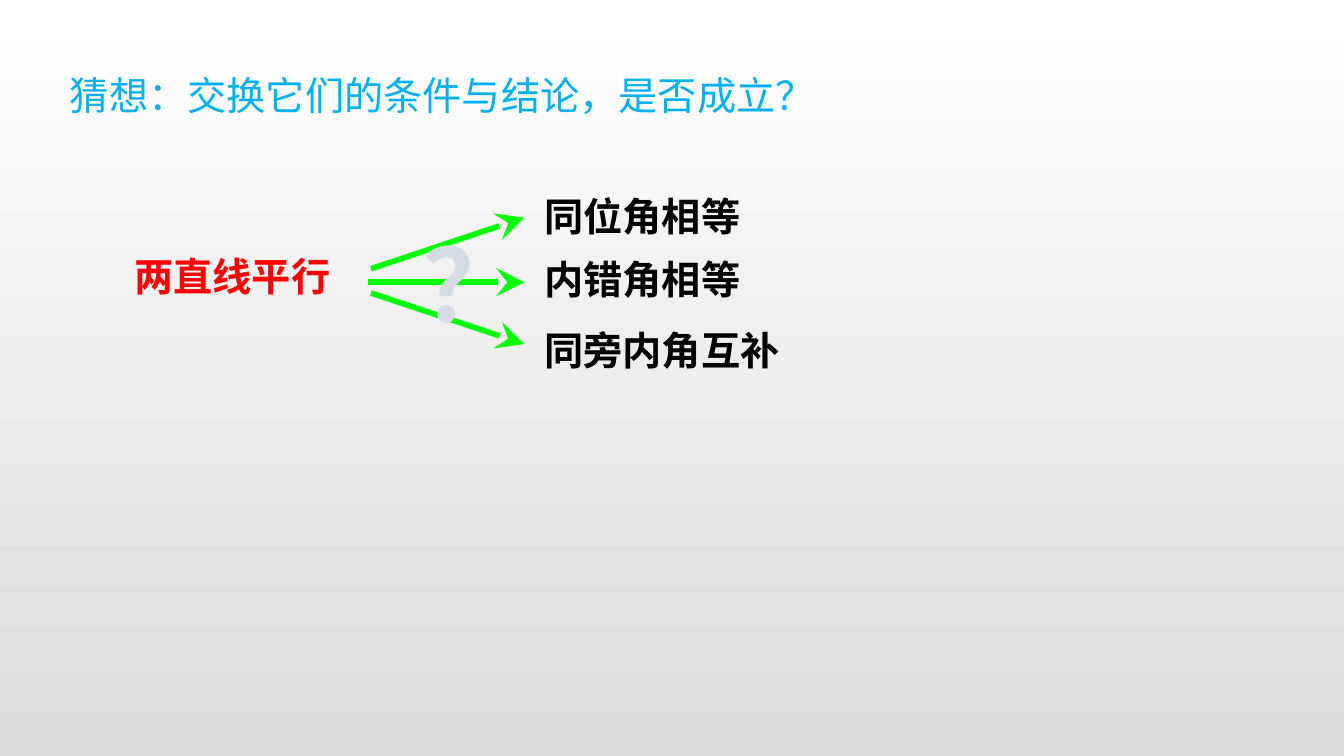
from lxml import etree
from pptx import Presentation
from pptx.dml.color import RGBColor
from pptx.enum.shapes import MSO_CONNECTOR
from pptx.enum.text import MSO_AUTO_SIZE, PP_ALIGN
from pptx.oxml.ns import qn
from pptx.util import Inches, Pt

LINE = MSO_CONNECTOR.STRAIGHT
GROW = MSO_AUTO_SIZE.SHAPE_TO_FIT_TEXT
LEFT = PP_ALIGN.LEFT
CENTER = PP_ALIGN.CENTER


def color(code):
    """Turn a hex string into a colour."""
    return RGBColor.from_string(code)


def label(slide, box, text, code, size=21, bold=True, face="Times New Roman",
          align=LEFT, wrap=True):
    """Place one line of text in a box and return its paragraph."""
    frame = slide.shapes.add_textbox(*map(Inches, box)).text_frame
    frame.word_wrap = wrap
    frame.auto_size = GROW
    frame.margin_left = frame.margin_right = Inches(0.07)
    frame.margin_top = frame.margin_bottom = Inches(0.04)
    para = frame.paragraphs[0]
    para.text = text
    para.alignment = align
    font = para.font
    font.name, font.size, font.bold = face, Pt(size), bold
    font.color.rgb = color(code)
    return para


def arrow(shapes, start, end):
    """Draw a green line with a large stealth head at its end."""
    line = shapes.add_connector(LINE, *map(Inches, (*start, *end)))
    line.line.color.rgb = color("00FF00")
    line.line.width = Pt(3)
    props = line._element.spPr
    etree.SubElement(props.find(qn("a:ln")), qn("a:tailEnd"),
                     type="stealth", w="lg", len="lg")
    etree.SubElement(props, qn("a:effectLst"))


def backdrop(slide):
    """Shade the slide from white at the top to grey at the bottom."""
    fill = slide.background.fill
    fill.gradient()
    fill.gradient_angle = 270
    for stop, code in zip(fill.gradient_stops, ("FFFFFF", "DBDBDB")):
        stop.color.rgb = color(code)


def title(slide, left, top):
    """Place the question that heads the slide."""
    para = label(slide, (left, top, 6.4, 0.43),
                 "猜想：交换它们的条件与结论，是否成立？", "00B0F0", bold=False)
    para.space_before = Pt(10.5)


def diagram(slide, left, top):
    """Link the premise to its three results, with a question mark on top."""
    label(slide, (left, top + 0.45, 1.92, 0.43), "两直线平行", "FF0000")
    results = (("同位角相等", 0, 1.93), ("内错角相等", 0.47, 1.93),
               ("同旁内角互补", 1, 2.26))
    for text, drop, width in results:
        label(slide, (left + 3.05, top + drop, width, 0.43), text, "000000")
    fan = slide.shapes.add_group_shape().shapes
    for indent, start, end in ((1.83, 0.61, 0.23), (1.81, 0.71, 0.71),
                               (1.83, 0.79, 1.17)):
        arrow(fan, (left + indent, top + start), (left + 2.97, top + end))
    label(slide, (left + 2.14, top + 0.22, 0.9, 0.98), "？", "D6DCE5",
          size=54, face="Arial", align=CENTER, wrap=False)


def main():
    """Build the slide and save it."""
    deck = Presentation()
    deck.slide_width = Inches(10)
    deck.slide_height = deck.slide_width * 9 // 16
    slide = deck.slides.add_slide(deck.slide_layouts[6])
    backdrop(slide)
    diagram(slide, 0.93, 1.39)
    title(slide, 0.45, 0.49)
    deck.save("out.pptx")


if __name__ == "__main__":
    main()
